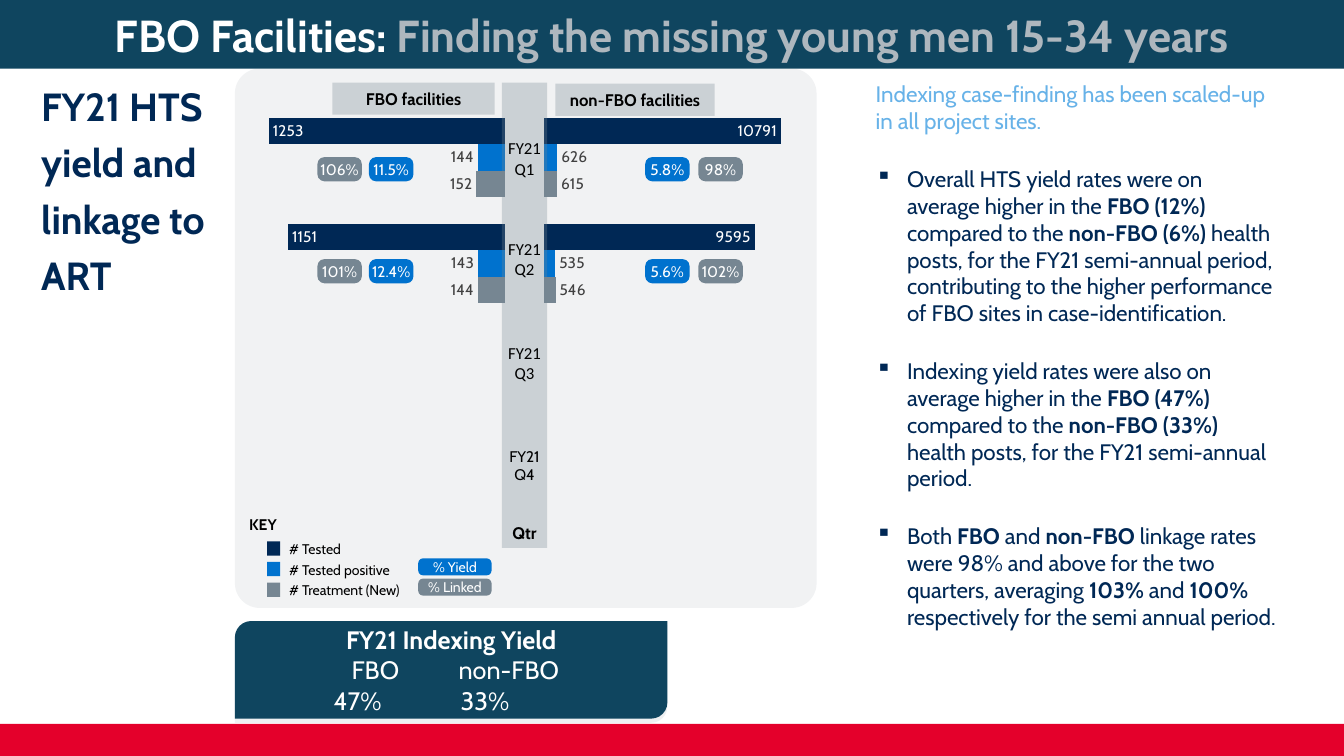
import pptx
import pptx.chart.data
import pptx.dml.color
import pptx.enum.chart
import pptx.enum.shapes
import pptx.enum.text
import pptx.oxml
import pptx.oxml.ns
import pptx.util
from lxml import etree

Cm = pptx.util.Cm
SHAPE = pptx.enum.shapes.MSO_SHAPE
ALIGN = pptx.enum.text.PP_ALIGN
ANCHOR = pptx.enum.text.MSO_ANCHOR
LABEL = pptx.enum.chart.XL_LABEL_POSITION


class Theme:
    FONT, FONT_ALT = "Cabin", "Calibri"
    WHITE, BLACK, LABEL = "FFFFFF", "000000", "404040"
    TEAL, RED, SILVER, SKY = "0F455F", "E4002B", "AEB7BE", "67B2E8"
    NAVY, BLUE, GREY = "002855", "0072CE", "768692"
    TITLE, SIDE, BANNER, BODY = 32, 28, 18, 16
    HEAD, SMALL, KEY = 12, 11, 10


def rgb(color):
    return pptx.dml.color.RGBColor.from_string(color)


def sub(parent, tag, **attrs):
    el = etree.SubElement(parent, pptx.oxml.ns.qn(tag))
    for name, value in attrs.items():
        el.set(name, str(value))
    return el


def style_font(font, size, color, bold=False, name=Theme.FONT):
    font.name, font.size, font.bold = name, pptx.util.Pt(size), bold
    font.color.rgb = rgb(color)


def add_run(p, text, **fmt):
    r = p.add_run()
    r.text = text
    style_font(r.font, **fmt)


def set_frame(tf, anchor, insets):
    """Insets are left, top, right, bottom in cm."""
    tf.word_wrap = True
    tf.vertical_anchor = anchor
    tf.margin_left, tf.margin_top, tf.margin_right, tf.margin_bottom = map(Cm, insets)


def add_box(s, box, fill, opacity=None, shape=SHAPE.RECTANGLE, corner=None, shadow=False):
    sp = s.shapes.add_shape(shape, *map(Cm, box))
    sp.shadow.inherit = False
    sp.fill.solid()
    sp.fill.fore_color.rgb = rgb(fill)
    sp.line.fill.background()
    if corner is not None:
        sp.adjustments[0] = corner
    if opacity is not None:
        color = sp._element.spPr.find(".//" + pptx.oxml.ns.qn("a:srgbClr"))
        sub(color, "a:alpha", val=opacity * 1000)
    if shadow:
        effects = sp._element.spPr.find(pptx.oxml.ns.qn("a:effectLst"))
        shade = sub(effects, "a:outerShdw", dist=38100, dir=5400000, rotWithShape=0)
        sub(sub(shade, "a:srgbClr", val=Theme.SILVER), "a:alpha", val=20000)
    return sp


def add_caption(sp, text, anchor=ANCHOR.MIDDLE, insets=(0, 0.13, 0, 0.13), align=ALIGN.CENTER, **fmt):
    set_frame(sp.text_frame, anchor, insets)
    p = sp.text_frame.paragraphs[0]
    p.alignment = align
    add_run(p, text, **fmt)
    return p


def add_label(s, box, text, **options):
    return add_caption(s.shapes.add_textbox(*map(Cm, box)), text, **options)


def add_pill(s, box, text, fill, size=Theme.SMALL):
    sp = add_box(s, box, fill, shape=SHAPE.ROUNDED_RECTANGLE, corner=0.289)
    add_caption(sp, text, insets=(0, 0, 0, 0), size=size, color=Theme.WHITE)


def add_bars(s, left, treated, positive, tested, maximum, mirrored=False):
    """Values run from Q2 to Q1; the two later quarters stay empty."""
    data = pptx.chart.data.CategoryChartData()
    data.categories = ["1", "2", "3", "4"]
    rows = (("Series 1", treated, Theme.GREY), ("Series 2", positive, Theme.BLUE),
            ("Series 3", tested, Theme.NAVY))
    for name, values, _ in rows:
        data.add_series(name, (None, None) + values)
    kind = pptx.enum.chart.XL_CHART_TYPE.BAR_CLUSTERED
    chart = s.shapes.add_chart(kind, Cm(left), Cm(2.41), Cm(6.93), Cm(11.13), data).chart
    chart.has_legend = chart.has_title = False
    style_font(chart.font, Theme.SMALL, Theme.BLACK)
    axis = chart.value_axis
    axis.minimum_scale, axis.maximum_scale = 0, maximum
    axis.reverse_order = mirrored
    axis.has_major_gridlines = axis.visible = False
    chart.category_axis.visible = False
    plot = chart.plots[0]
    plot.gap_width, plot.overlap, plot.vary_by_categories = 100, 0, False
    for series, (_, _, color) in zip(plot.series, rows):
        series.format.fill.solid()
        series.format.fill.fore_color.rgb = rgb(color)
        inside = color == Theme.NAVY
        labels = series.data_labels
        labels.show_value = True
        labels.position = LABEL.INSIDE_END if inside else LABEL.OUTSIDE_END
        style_font(labels.font, Theme.SMALL, Theme.WHITE if inside else Theme.LABEL)


def add_commentary(s):
    """In each bullet every second run is bold."""
    bullets = (
        ("Overall HTS yield rates were on average higher in the ", "FBO (12%) ",
         "compared to the ", "non-FBO (6%) ",
         "health posts, for the FY21 semi-annual period, contributing to the higher "
         "performance of FBO sites in case-identification."),
        ("Indexing yield rates were also on average higher in the ", "FBO (47%) ",
         "compared to the ", "non-FBO (33%) ",
         "health posts, for the FY21 semi-annual period."),
        ("Both ", "FBO", " and ", "non-FBO",
         " linkage rates were 98% and above for the two quarters, averaging ", "103%",
         " and ", "100% ", "respectively for the semi annual period."))
    tf = s.shapes.add_textbox(Cm(21.82), Cm(1.9), Cm(10.64), Cm(16.13)).text_frame
    set_frame(tf, ANCHOR.TOP, (0.25, 0.13, 0.25, 0.13))
    p = tf.paragraphs[0]
    p.space_after = pptx.util.Pt(22)
    add_run(p, "Indexing case-finding has been scaled-up in all project sites.",
            size=Theme.BODY, color=Theme.SKY)
    for runs in bullets:
        p = tf.add_paragraph()
        p.space_after = pptx.util.Pt(22)
        pPr = p._p.get_or_add_pPr()
        pPr.set("marL", str(Cm(0.79)))
        pPr.set("indent", str(-Cm(0.79)))
        sub(pPr, "a:buChar", char="▪")
        for i, text in enumerate(runs):
            add_run(p, text, size=Theme.BODY, color=Theme.NAVY, bold=i % 2 == 1)


def add_indexing_yield(s):
    sp = add_box(s, (5.92, 15.65, 10.9, 2.46), Theme.TEAL,
                 shape=SHAPE.ROUND_2_DIAG_RECTANGLE, shadow=True)
    fmt = dict(size=Theme.BANNER, color=Theme.WHITE)
    add_caption(sp, "FY21 Indexing Yield", insets=(0.25, 0.13, 0.25, 0.13), bold=True, **fmt)
    for text, stops in (("\tFBO\tnon-FBO", (2.57, 5.27)), ("\t47%\t33%", (2.12, 5.32))):
        p = sp.text_frame.add_paragraph()
        p.alignment = ALIGN.LEFT
        tabs = sub(p._p.get_or_add_pPr(), "a:tabLst")
        for stop in stops:
            sub(tabs, "a:tab", pos=Cm(stop), algn="l")
        add_run(p, text, **fmt)


def add_key(s):
    fmt = dict(align=ALIGN.LEFT, insets=(0.13, 0.13, 0, 0.13), color=Theme.BLACK)
    add_label(s, (6.15, 12.93, 3.76, 0.58), "KEY", size=Theme.SMALL, bold=True, **fmt)
    entries = (("# Tested", Theme.NAVY), ("# Tested positive", Theme.BLUE),
               ("# Treatment (New)", Theme.GREY))
    for i, (text, color) in enumerate(entries):
        y = 13.54 + 0.52 * i
        add_box(s, (6.73, y + 0.1, 0.33, 0.36), color)
        add_label(s, (7.16, y, 3.76, 0.58), text, size=Theme.KEY, **fmt)
    add_pill(s, (10.54, 14.07, 1.85, 0.43), "% Yield", Theme.BLUE, Theme.KEY)
    add_pill(s, (10.54, 14.58, 1.85, 0.43), "% Linked", Theme.GREY, Theme.KEY)


def add_quarter_panel(s):
    add_box(s, (5.92, 1.73, 14.66, 13.59), Theme.GREY, 10, SHAPE.ROUNDED_RECTANGLE, 0.046)
    add_bars(s, 5.94, (144, 152), (143, 144), (1151, 1253), 1400, mirrored=True)
    add_bars(s, 13.56, (546, 615), (535, 626), (9595, 10791), 12000)
    heads = (("Qtr", (12.65, 2.08, 1.14, 11.73), ANCHOR.BOTTOM),
             ("FBO facilities", (8.38, 2.08, 4.09, 0.81), ANCHOR.MIDDLE),
             ("non-FBO facilities", (14, 2.11, 4.01, 0.81), ANCHOR.MIDDLE))
    for text, box, anchor in heads:
        add_caption(add_box(s, box, Theme.GREY, 30), text, anchor,
                    size=Theme.HEAD, color=Theme.BLACK, bold=True)
    for quarter, y in enumerate((3.35, 5.89, 8.51, 11.13), 1):
        last = quarter == 4
        add_label(s, (12.65, y, 1.14, 1.65), f"FY21 Q{quarter}", anchor=ANCHOR.TOP,
                  size=Theme.SMALL if last else Theme.HEAD, color=Theme.BLACK,
                  name=Theme.FONT if last else Theme.FONT_ALT)
    columns = ((8, Theme.GREY), (9.3, Theme.BLUE), (16.26, Theme.BLUE), (17.6, Theme.GREY))
    rates = ((3.96, ("106%", "11.5%", "5.8%", "98%")),
             (6.53, ("101%", "12.4%", "5.6%", "102%")))
    for y, texts in rates:
        for text, (x, color) in zip(texts, columns):
            add_pill(s, (x, y, 1.12, 0.61), text, color)
    add_key(s)


def main():
    prs = pptx.Presentation()
    prs.slide_width, prs.slide_height = Cm(33.87), Cm(19.05)
    s = prs.slides.add_slide(prs.slide_layouts[6])
    add_box(s, (0, 18.24, 33.87, 0.81), Theme.RED, shadow=True)
    header = add_box(s, (0, 0, 33.87, 1.73), Theme.TEAL)
    p = add_caption(header, "FBO Facilities: ", size=Theme.TITLE, color=Theme.WHITE, bold=True)
    add_run(p, "Finding the missing young men 15-34 years",
            size=Theme.TITLE, color=Theme.SILVER, bold=True)
    add_commentary(s)
    p = add_label(s, (1.04, 1.83, 4.29, 7.39), "FY21 HTS yield and linkage to ART",
                  anchor=ANCHOR.TOP, insets=(0, 0, 0, 0), align=ALIGN.LEFT,
                  size=Theme.SIDE, color=Theme.NAVY, bold=True)
    p.line_spacing = 1.2
    add_indexing_yield(s)
    add_quarter_panel(s)
    prs.save("out.pptx")


if __name__ == "__main__":
    main()
